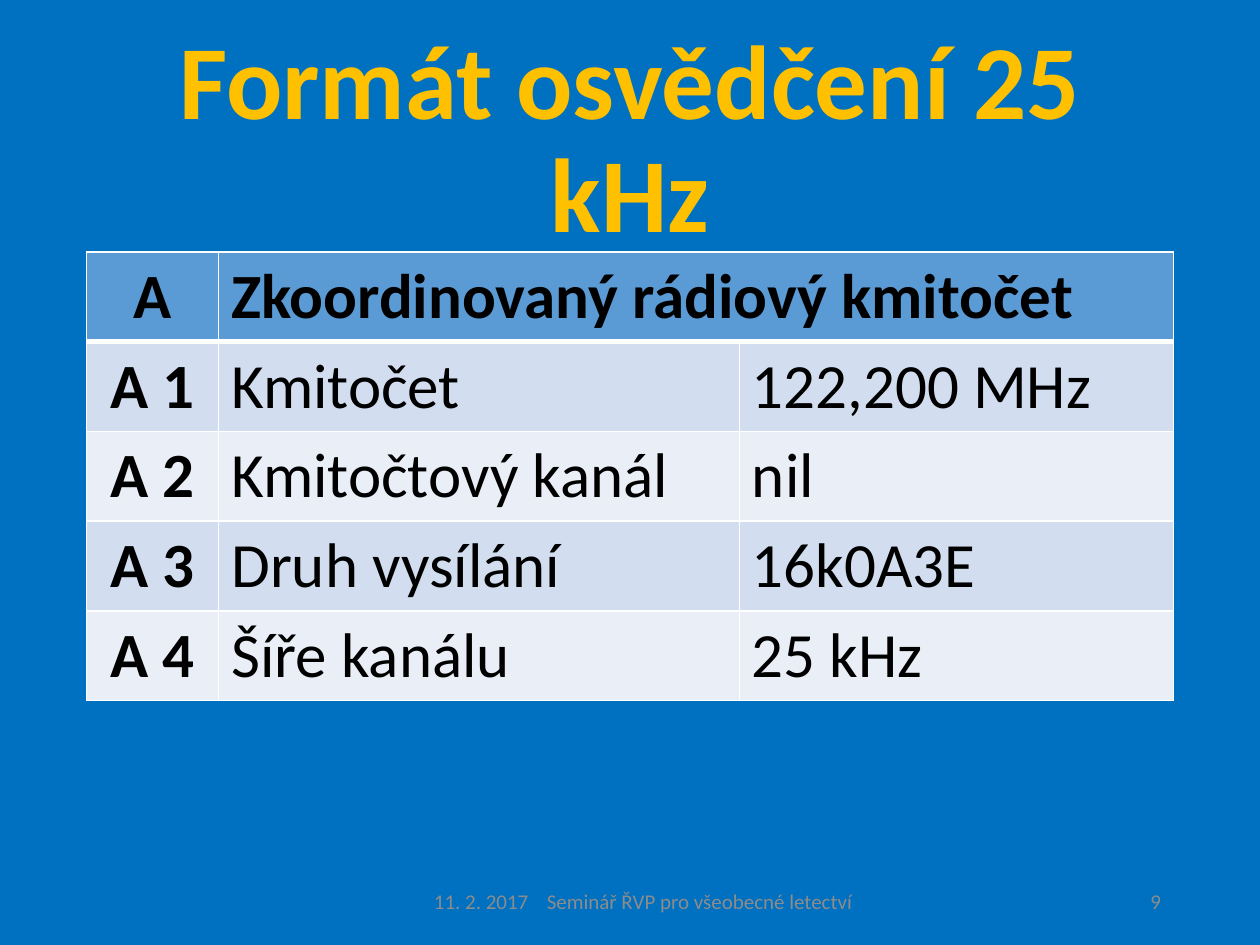
"""Build the slide with the 25 kHz certificate format table."""
from dataclasses import dataclass

from lxml import etree
from pptx import Presentation
from pptx import util as u
from pptx.dml.color import RGBColor
from pptx.enum import text as t
from pptx.oxml import ns

BLUE = RGBColor(0x00, 0x70, 0xC0)
GOLD = RGBColor(0xFF, 0xC0, 0x00)
GREY = RGBColor(0x8C, 0x8C, 0x8C)
BLACK = RGBColor(0x00, 0x00, 0x00)
WHITE = RGBColor(0xFF, 0xFF, 0xFF)
HEADER = RGBColor(0x5B, 0x9B, 0xD5)
BANDS = (RGBColor(0xEA, 0xEF, 0xF7), RGBColor(0xD2, 0xDE, 0xEF))
LEFT, CENTER, RIGHT = t.PP_ALIGN.LEFT, t.PP_ALIGN.CENTER, t.PP_ALIGN.RIGHT
MARGIN, CONTENT_WIDTH = 49.5, 621
FOOTER_TOP, FOOTER_HEIGHT = 500.5, 28.75
COLUMN_WIDTHS = (75.5, 297.5, 248)
ROW_HEIGHT = 51.3


@dataclass(frozen=True)
class Box:
    left: float
    top: float
    width: float
    height: float

    def lengths(self) -> list[u.Length]:
        return [u.Pt(v) for v in (self.left, self.top, self.width, self.height)]


@dataclass(frozen=True)
class Entry:
    code: str
    label: str
    value: str = ""


ENTRIES = (
    Entry("A", "Zkoordinovaný rádiový kmitočet"),
    Entry("A 1", "Kmitočet", "122,200 MHz"),
    Entry("A 2", "Kmitočtový kanál", "nil"),
    Entry("A 3", "Druh vysílání", "16k0A3E"),
    Entry("A 4", "Šíře kanálu", "25 kHz"),
)


def write(frame, wording: str, *, size: float, color: RGBColor, bold: bool = False,
          align=LEFT, spacing: float = 1.0):
    paragraph = frame.paragraphs[0]
    paragraph.alignment = align
    paragraph.line_spacing = spacing
    run = paragraph.add_run()
    run.text = wording
    run.font.name = "Calibri"
    run.font.size = u.Pt(size)
    run.font.bold = bold
    run.font.color.rgb = color
    return paragraph


def add_label(slide, box: Box, wording: str, *, inset: float = 7.2, **style):
    frame = slide.shapes.add_textbox(*box.lengths()).text_frame
    frame.word_wrap = True
    frame.margin_left = u.Pt(inset)
    frame.vertical_anchor = t.MSO_ANCHOR.MIDDLE
    return write(frame, wording, **style)


def set_tab(paragraph, position: float) -> None:
    stops = etree.SubElement(paragraph._p.get_or_add_pPr(), ns.qn("a:tabLst"))
    etree.SubElement(stops, ns.qn("a:tab"), pos=str(u.Pt(position)), algn="l")


def set_borders(cell, widths: dict[str, float]) -> None:
    properties = cell._tc.get_or_add_tcPr()
    for side, width in widths.items():
        line = etree.SubElement(properties, ns.qn(f"a:ln{side}"), w=str(u.Pt(width)))
        fill = etree.SubElement(line, ns.qn("a:solidFill"))
        etree.SubElement(fill, ns.qn("a:srgbClr"), val=str(WHITE))


def add_certificate(slide, entries: tuple[Entry, ...]) -> None:
    box = Box(MARGIN, 144, CONTENT_WIDTH, ROW_HEIGHT * len(entries))
    table = slide.shapes.add_table(len(entries), len(COLUMN_WIDTHS), *box.lengths()).table
    for column, width in zip(table.columns, COLUMN_WIDTHS):
        column.width = u.Pt(width)
    for r, entry in enumerate(entries):
        table.rows[r].height = u.Pt(ROW_HEIGHT)
        for c, wording in enumerate((entry.code, entry.label, entry.value)):
            cell = table.cell(r, c)
            set_borders(cell, {"L": 1, "R": 1, "T": 3 if r == 1 else 1,
                               "B": 3 if r == 0 else 1})
            cell.fill.solid()
            cell.fill.fore_color.rgb = BANDS[r % 2] if r else HEADER
            if wording:
                write(cell.text_frame, wording, size=36, color=BLACK,
                      bold=r == 0 or c == 0, align=LEFT if c else CENTER)
    table.cell(0, 1).merge(table.cell(0, 2))


def main() -> None:
    deck = Presentation()
    deck.slide_width, deck.slide_height = u.Pt(720), u.Pt(540)
    slide = deck.slides.add_slide(deck.slide_layouts[6])
    slide.background.fill.solid()
    slide.background.fill.fore_color.rgb = BLUE
    add_label(slide, Box(MARGIN, 28.75, CONTENT_WIDTH, 104.4), "Formát osvědčení 25 kHz",
              size=60, color=GOLD, bold=True, align=CENTER, spacing=0.9)
    add_certificate(slide, ENTRIES)
    add_label(slide, Box(508.5, FOOTER_TOP, 162, FOOTER_HEIGHT), "9",
              size=12, color=GREY, align=RIGHT)
    footer = add_label(slide, Box(238.5, FOOTER_TOP, 257, FOOTER_HEIGHT),
                       "11. 2. 2017\tSeminář ŘVP pro všeobecné letectví",
                       inset=9.5, size=12, color=GREY)
    set_tab(footer, 64.5)
    deck.save("out.pptx")


if __name__ == "__main__":
    main()
